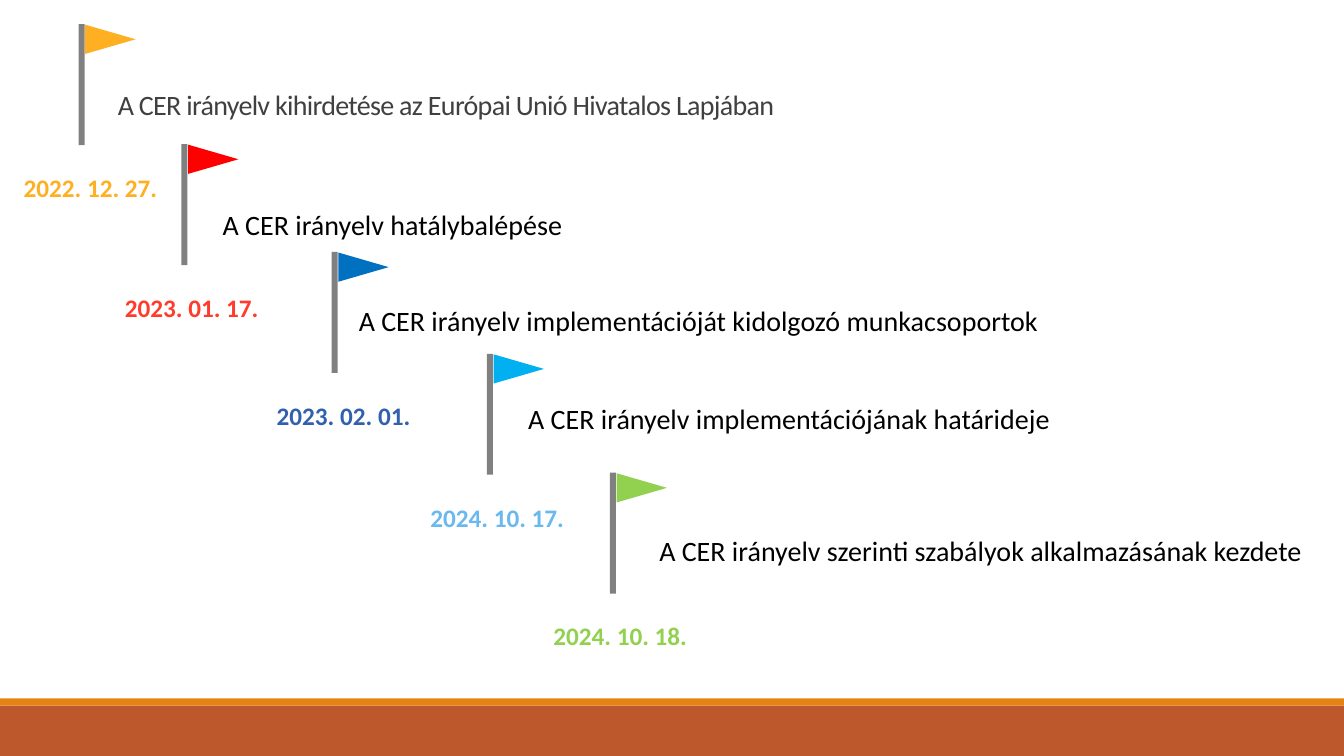
from dataclasses import dataclass

import pptx
import pptx.dml.color
import pptx.enum.shapes
import pptx.enum.text
import pptx.util

Inches = pptx.util.Inches
Shape = pptx.enum.shapes.MSO_SHAPE
Anchor = pptx.enum.text.MSO_ANCHOR
Align = pptx.enum.text.PP_ALIGN
AutoSize = pptx.enum.text.MSO_AUTO_SIZE


@dataclass(frozen=True)
class Theme:
    font: str = "Calibri"
    label_size: int = 20
    date_size: int = 18
    title: str = "404040"
    label: str = "000000"
    pole: str = "808080"
    band: str = "BD582C"
    stripe: str = "E48312"


@dataclass(frozen=True)
class Milestone:
    date: str
    label: str
    pole_left: float
    pole_top: float
    label_left: float
    label_top: float
    flag_color: str
    date_color: str
    date_align: Align = Align.LEFT
    label_color: str = Theme.label
    line_spacing: float = 0.9
    tracking: int = 0


THEME = Theme()

MILESTONES = [
    Milestone("2022. 12. 27.", "A CER irányelv kihirdetése az Európai Unió Hivatalos Lapjában",
              0.78, 0.24, 1.07, 0.74, "FFAF22", "FFAF22", Align.RIGHT, THEME.title, 0.85, -50),
    Milestone("2023. 01. 17.", "A CER irányelv hatálybalépése",
              1.8, 1.43, 2.11, 1.94, "FF0000", "FF3B2B"),
    Milestone("2023. 02. 01.", "A CER irányelv implementációját kidolgozó munkacsoportok",
              3.29, 2.5, 3.46, 2.89, "0070C0", "3160AE", Align.RIGHT),
    Milestone("2024. 10. 17.", "A CER irányelv implementációjának határideje",
              4.83, 3.51, 5.14, 3.86, "00B0F0", "69B9EE"),
    Milestone("2024. 10. 18.", "A CER irányelv szerinti szabályok alkalmazásának kezdete",
              6.05, 4.69, 6.44, 5.17, "92D050", "92D050"),
]


def add_block(page, kind: Shape, left: float, top: float, width: float, height: float,
              color: str, rotation: float = 0) -> None:
    block = page.shapes.add_shape(kind, Inches(left), Inches(top), Inches(width), Inches(height))
    block.shadow.inherit = False
    block.fill.solid()
    block.fill.fore_color.rgb = pptx.dml.color.RGBColor.from_string(color)
    block.line.fill.background()
    block.rotation = rotation


def add_text(page, text: str, left: float, top: float, width: float, height: float,
             size: int, color: str, bold: bool = False):
    box = page.shapes.add_textbox(Inches(left), Inches(top), Inches(width), Inches(height))
    box.text_frame.text = text
    box.text_frame.word_wrap = True
    font = box.text_frame.paragraphs[0].runs[0].font
    font.name = THEME.font
    font.size = pptx.util.Pt(size)
    font.bold = bold
    font.color.rgb = pptx.dml.color.RGBColor.from_string(color)
    return box.text_frame


def add_date(page, milestone: Milestone) -> None:
    frame = add_text(page, milestone.date, milestone.pole_left - 0.66, milestone.pole_top + 1.42,
                     1.54, 0.4, THEME.date_size, milestone.date_color, bold=True)
    frame.word_wrap = False
    frame.auto_size = AutoSize.SHAPE_TO_FIT_TEXT
    frame.paragraphs[0].alignment = milestone.date_align


def add_label(page, milestone: Milestone) -> None:
    frame = add_text(page, milestone.label, milestone.label_left, milestone.label_top,
                     10.28, 0.51, THEME.label_size, milestone.label_color)
    frame.vertical_anchor = Anchor.BOTTOM
    para = frame.paragraphs[0]
    para.line_spacing = milestone.line_spacing
    if milestone.tracking:
        para.runs[0]._r.get_or_add_rPr().set("spc", str(milestone.tracking))


def add_flag(page, milestone: Milestone) -> None:
    add_block(page, Shape.ISOSCELES_TRIANGLE, milestone.pole_left + 0.17,
              milestone.pole_top - 0.1, 0.29, 0.5, milestone.flag_color, rotation=90)
    add_block(page, Shape.RECTANGLE, milestone.pole_left, milestone.pole_top,
              0.06, 1.2, THEME.pole)


def main() -> None:
    deck = pptx.Presentation()
    deck.slide_width = Inches(13.33)
    deck.slide_height = Inches(7.5)
    page = deck.slides.add_slide(deck.slide_layouts[6])
    add_block(page, Shape.RECTANGLE, 0, 7, 13.33, 0.5, THEME.band)
    add_block(page, Shape.RECTANGLE, 0, 6.93, 13.33, 0.07, THEME.stripe)
    for milestone in MILESTONES:
        add_date(page, milestone)
        add_flag(page, milestone)
        add_label(page, milestone)
    deck.save("out.pptx")


if __name__ == "__main__":
    main()
